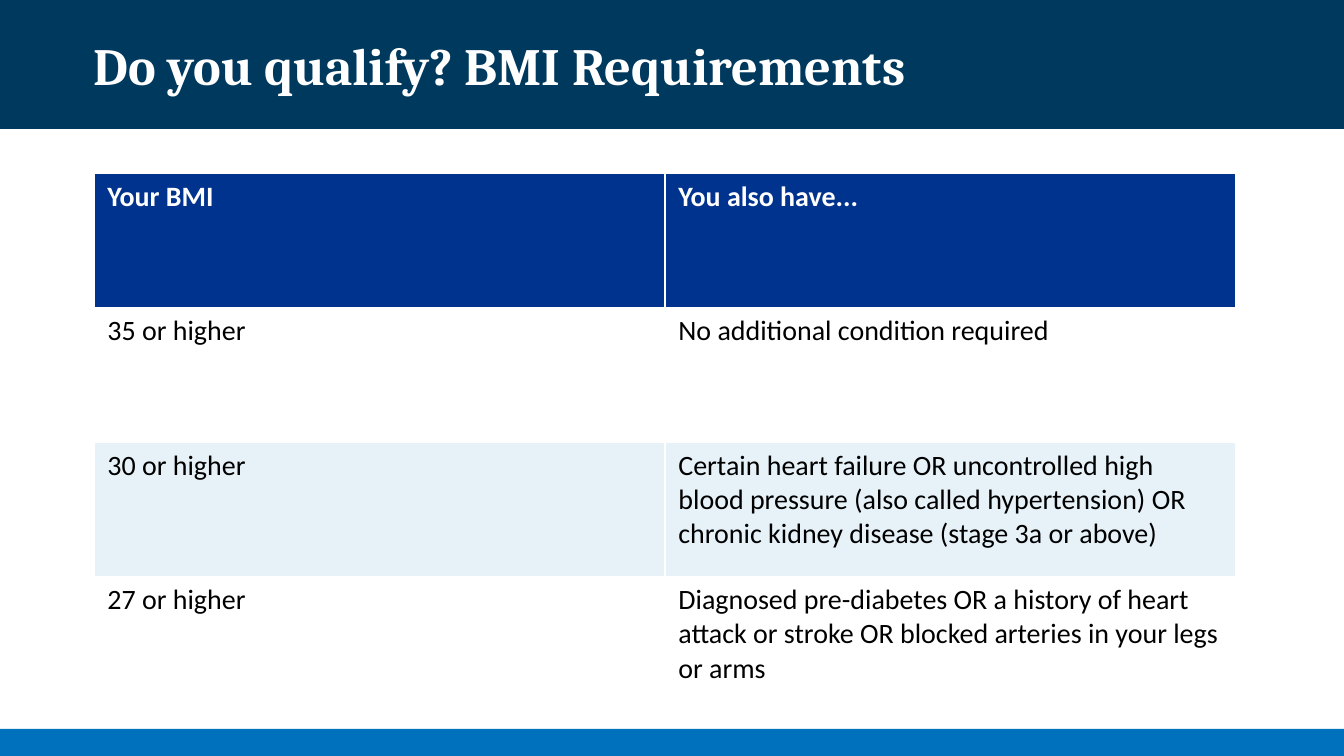
import pptx
import pptx.dml.color
import pptx.enum.shapes
import pptx.enum.text
import pptx.util

TITLE = "Do you qualify? BMI Requirements"
ROWS = [
    ("Your BMI", "You also have..."),
    ("35 or higher", "No additional condition required"),
    ("30 or higher", "Certain heart failure OR uncontrolled high blood pressure "
                     "(also called hypertension) OR chronic kidney disease (stage 3a or above)"),
    ("27 or higher", "Diagnosed pre-diabetes OR a history of heart attack or stroke "
                     "OR blocked arteries in your legs or arms"),
]
ROW_FILLS = ["00338D", "FFFFFF", "E6F1F8", "FFFFFF"]

# Layout in px, 134.4 to the inch
WIDTH, HEIGHT = 1344, 756
HEADER_HEIGHT, FOOTER_HEIGHT = 129, 27
MARGIN, CONTENT_WIDTH = 94, 1142
TABLE_TOP, TABLE_HEIGHT = 173, 538


def px(length):
    return round(length * 914400 / 134.4)


def color(value):
    return pptx.dml.color.RGBColor.from_string(value)


def style(paragraph, font_name, size, value, bold):
    for run in paragraph.runs:
        run.font.name = font_name
        run.font.size = pptx.util.Pt(size)
        run.font.color.rgb = color(value)
        run.font.bold = bold


def add_band(slide, top, height, value):
    band = slide.shapes.add_shape(pptx.enum.shapes.MSO_SHAPE.RECTANGLE,
                                  0, px(top), px(WIDTH), px(height))
    band.shadow.inherit = False
    band.fill.solid()
    band.fill.fore_color.rgb = color(value)
    band.line.fill.background()


def add_title(slide):
    title = slide.shapes.add_textbox(px(MARGIN), 0, px(CONTENT_WIDTH), px(HEADER_HEIGHT))
    frame = title.text_frame
    frame.text = TITLE
    frame.word_wrap = True
    frame.vertical_anchor = pptx.enum.text.MSO_ANCHOR.MIDDLE
    frame.margin_left = frame.margin_right = frame.margin_top = frame.margin_bottom = 0
    style(frame.paragraphs[0], "Cambria", 28, "FFFFFF", True)


def add_requirements(slide):
    # The default table style supplies the white rules between cells
    requirements = slide.shapes.add_table(
        len(ROWS), len(ROWS[0]), px(MARGIN), px(TABLE_TOP),
        px(CONTENT_WIDTH), px(TABLE_HEIGHT)).table
    for row, (texts, fill) in enumerate(zip(ROWS, ROW_FILLS)):
        is_header = row == 0
        for column, text in enumerate(texts):
            cell = requirements.cell(row, column)
            cell.fill.solid()
            cell.fill.fore_color.rgb = color(fill)
            cell.text_frame.text = text
            style(cell.text_frame.paragraphs[0], "Calibri", 15,
                  "FFFFFF" if is_header else "000000", is_header)


def main():
    deck = pptx.Presentation()
    deck.slide_width, deck.slide_height = px(WIDTH), px(HEIGHT)
    slide = deck.slides.add_slide(deck.slide_layouts[6])

    # Header and footer bands
    add_band(slide, 0, HEADER_HEIGHT, "00395E")
    add_band(slide, HEIGHT - FOOTER_HEIGHT, FOOTER_HEIGHT, "0071BC")

    # Title and table
    add_title(slide)
    add_requirements(slide)
    deck.save("out.pptx")


if __name__ == "__main__":
    main()
